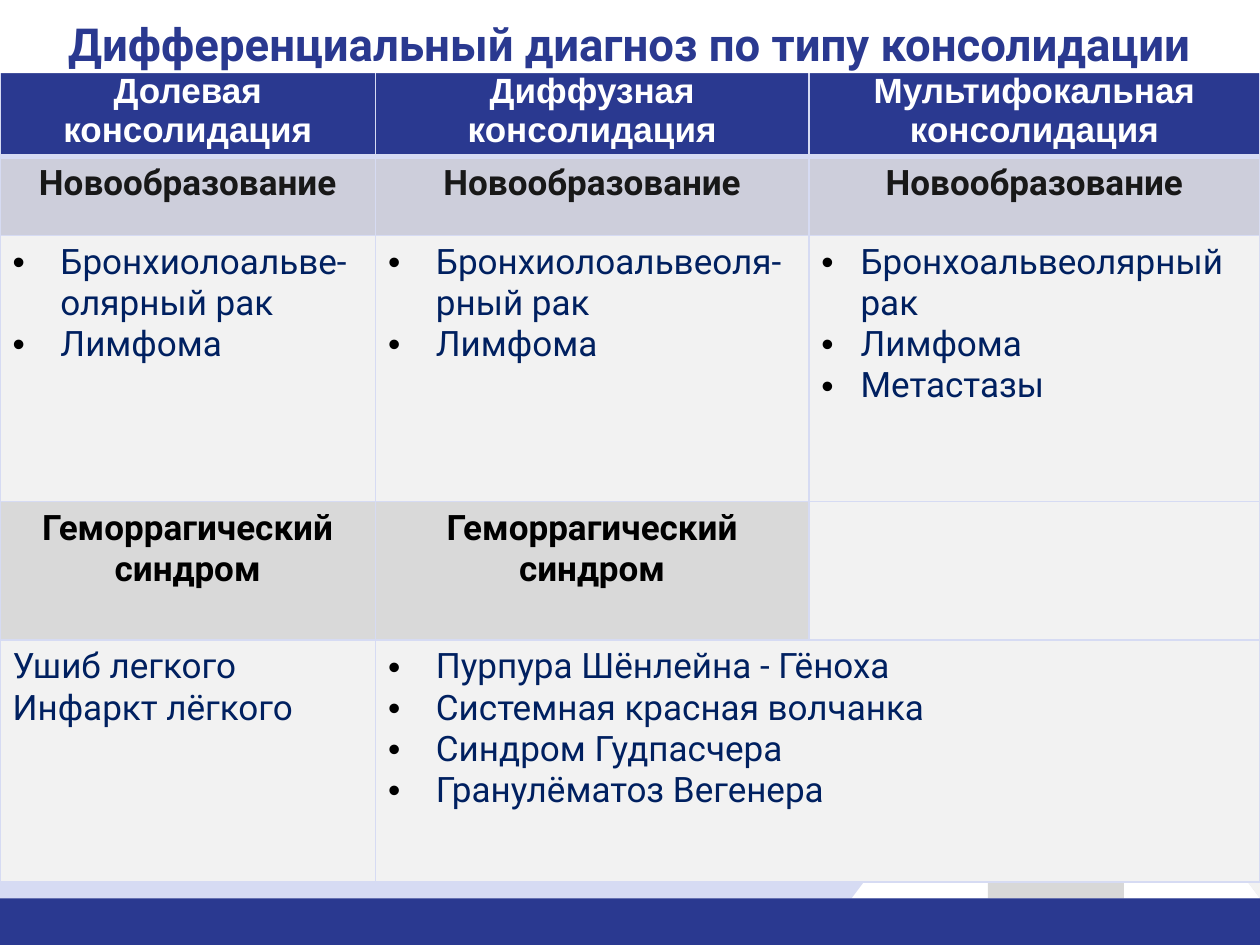
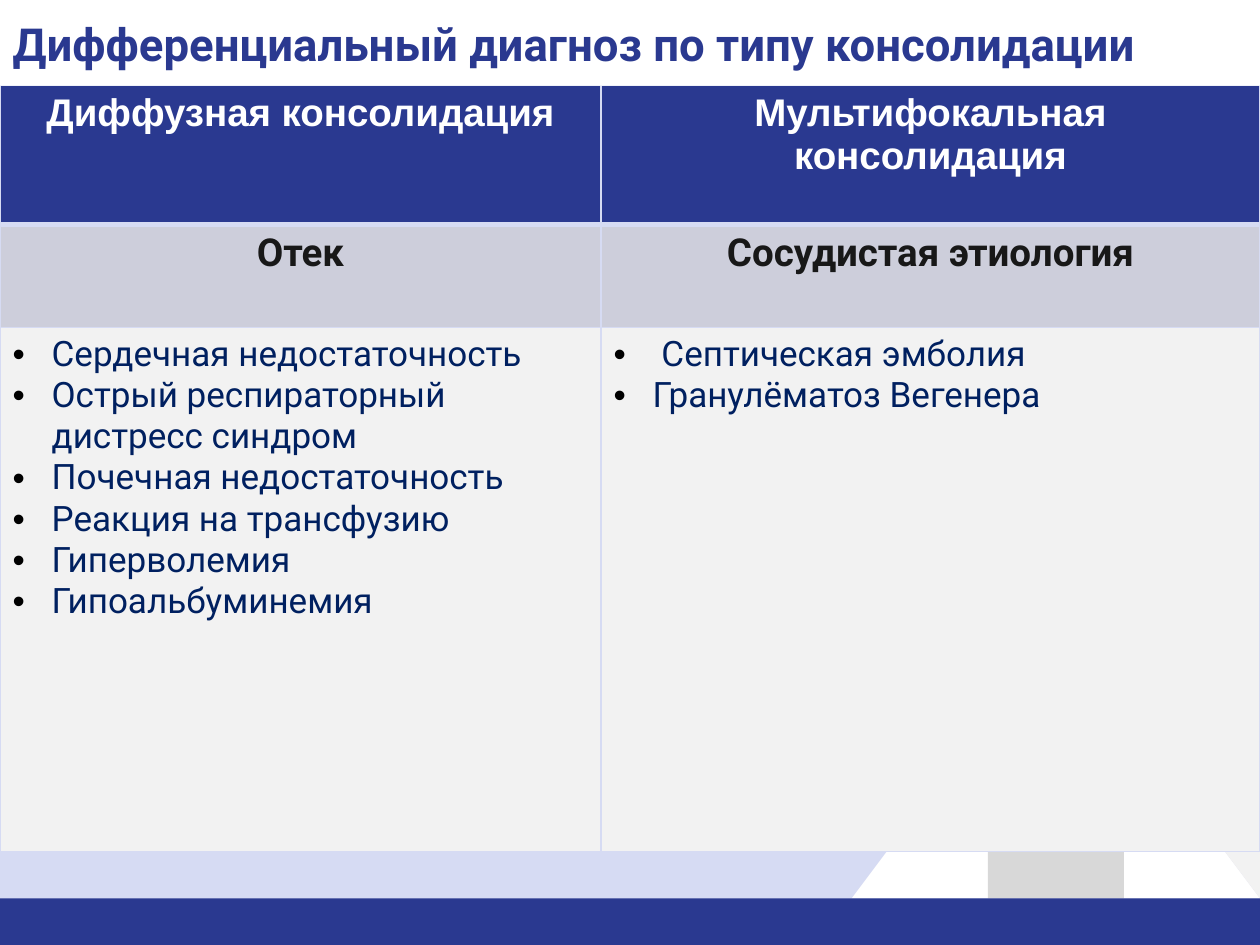
from dataclasses import dataclass

from lxml import etree
from pptx import Presentation
from pptx.dml.color import RGBColor
from pptx.enum.shapes import MSO_SHAPE
from pptx.enum.text import MSO_ANCHOR, MSO_AUTO_SIZE, PP_ALIGN
from pptx.oxml.ns import qn
from pptx.util import Pt

PX = 9144  # EMU in one px, 100 px to the inch
TITLE_ONLY = 5
RECTANGLE = MSO_SHAPE.RECTANGLE
RIGHT_TRIANGLE = MSO_SHAPE.RIGHT_TRIANGLE
LEFT, CENTER = PP_ALIGN.LEFT, PP_ALIGN.CENTER
PAGE_WIDTH, PAGE_HEIGHT = 1000, 750
BAND_TOP = 713
MOTIF_SIDE, MOTIF_HEIGHT = 108, 144


@dataclass(frozen=True)
class Theme:
    navy: str = "2A3990"
    lavender: str = "D6DBF3"
    white: str = "FFFFFF"
    silver: str = "D8D8D8"
    pale: str = "F2F2F2"
    body_ink: str = "002060"
    black: str = "000000"
    title_size: int = 26
    body_size: int = 20
    heading_font: str = "Arial"
    text_font: str = "Roboto"


THEME = Theme()

# kind of cell: fill, text colour, font, bold, alignment
CELL_STYLES = {
    "header": (THEME.navy, THEME.white, THEME.heading_font, True, CENTER),
    "section": ("CDCEDB", "181818", THEME.text_font, True, CENTER),
    "subsection": ("D9D9D9", THEME.black, THEME.text_font, True, CENTER),
    "body": (THEME.pale, THEME.body_ink, THEME.text_font, False, LEFT),
}


@dataclass(frozen=True)
class Cell:
    """Paragraphs of a cell, with one bullet indent in px for each (0: no bullet)."""
    kind: str
    lines: tuple = ()
    indents: tuple = ()
    span: int = 1


def header(text):
    return Cell("header", (text,), (0,))


def section(text):
    return Cell("section", (text,), (0,))


def subsection(text):
    return Cell("subsection", (text,), (0,))


def plain(*lines):
    return Cell("body", lines, (0,) * len(lines))


def bullets(*lines, indent=38, span=1):
    return Cell("body", lines, (indent,) * len(lines), span)


def color(value):
    return RGBColor.from_string(value)


def paint(target, value):
    target.fill.solid()
    target.fill.fore_color.rgb = color(value)


def set_attributes(target, values):
    for name, value in values.items():
        setattr(target, name, value)


def format_font(font, name, size, ink, bold):
    set_attributes(font, {"name": name, "size": Pt(size), "bold": bold})
    font.color.rgb = color(ink)


def add_block(page, kind, box, fill):
    block = page.shapes.add_shape(kind, *(length * PX for length in box))
    block.shadow.inherit = False
    paint(block, fill)
    block.line.fill.background()
    return block


def decorate_layout(deck, layout, page):
    """Draw the shared motif and footer band, then move them to the layout."""
    paint(deck.slide_master.background, THEME.lavender)
    right = PAGE_WIDTH - MOTIF_SIDE
    middle = right - MOTIF_SIDE
    left = middle - MOTIF_SIDE
    top = BAND_TOP - MOTIF_HEIGHT

    def motif(kind, x, fill):
        return add_block(page, kind, (x, top, MOTIF_SIDE, MOTIF_HEIGHT), fill)

    lower_right = motif(RIGHT_TRIANGLE, right, THEME.white)
    lower_left = motif(RIGHT_TRIANGLE, left, THEME.white)
    lower_left.element.spPr.find(qn("a:xfrm")).set("flipH", "1")
    center = motif(RECTANGLE, middle, THEME.silver)
    upper_right = motif(RIGHT_TRIANGLE, right, THEME.pale)
    upper_right.rotation = 180
    band = add_block(page, RECTANGLE,
                     (0, BAND_TOP, PAGE_WIDTH, PAGE_HEIGHT - BAND_TOP), THEME.navy)
    for block in (lower_right, lower_left, center, upper_right, band):
        layout.shapes.element.append(block.element)


def set_title(page, text, height, alignment):
    """Format the title placeholder and bring it in front of the table."""
    title = page.shapes.title
    set_attributes(title, {"left": 0, "top": 0, "width": PAGE_WIDTH * PX,
                           "height": height * PX})
    paint(title, THEME.white)
    frame = title.text_frame
    set_attributes(frame, {
        "text": text, "word_wrap": True, "auto_size": MSO_AUTO_SIZE.NONE,
        "vertical_anchor": MSO_ANCHOR.TOP, "margin_top": 13 * PX, "margin_bottom": 0,
        "margin_left": 10 * PX, "margin_right": 10 * PX,
    })
    para = frame.paragraphs[0]
    para.alignment = alignment
    format_font(para.runs[0].font, THEME.text_font, THEME.title_size, THEME.navy, True)
    title.element.getparent().append(title.element)


def add_bullet(para, indent):
    properties = para._p.get_or_add_pPr()
    properties.set("marL", str(indent * PX))
    properties.set("indent", str(-indent * PX))
    bullet_color = etree.SubElement(properties, qn("a:buClr"))
    etree.SubElement(bullet_color, qn("a:srgbClr"), val=THEME.black)
    etree.SubElement(properties, qn("a:buFont"), typeface="Arial")
    etree.SubElement(properties, qn("a:buChar"), char="•")


def add_borders(cell, widths):
    """Add cell borders from a dict of side letter to points, in schema order."""
    properties = cell._tc.get_or_add_tcPr()
    for side, width in widths.items():
        line = etree.SubElement(properties, qn(f"a:ln{side}"), w=str(Pt(width)))
        fill = etree.SubElement(line, qn("a:solidFill"))
        etree.SubElement(fill, qn("a:srgbClr"), val=THEME.lavender)


def fill_cell(cell, content, size):
    fill, ink, font_name, bold, alignment = CELL_STYLES[content.kind]
    paint(cell, fill)
    frame = cell.text_frame
    for index, (line, indent) in enumerate(zip(content.lines, content.indents)):
        para = frame.add_paragraph() if index else frame.paragraphs[0]
        para.alignment = alignment
        if indent:
            add_bullet(para, indent)
        span = para.add_run()
        span.text = line
        format_font(span.font, font_name, size, ink, bold)


def add_diagnosis_table(page, top, widths, heights, rows, heading_size):
    box = (0, top, sum(widths), sum(heights))
    table = page.shapes.add_table(len(heights), len(widths),
                                  *(length * PX for length in box)).table
    set_attributes(table, {"first_row": False, "horz_banding": False})
    for column, width in zip(table.columns, widths):
        column.width = width * PX
    for row, height in zip(table.rows, heights):
        row.height = height * PX
    for y, contents in enumerate(rows):
        for x in range(len(widths)):
            add_borders(table.cell(y, x), {"L": 1, "R": 1, "T": 3 if y == 1 else 1,
                                           "B": 3 if y == 0 else 1})
        for x, content in enumerate(contents):
            cell = table.cell(y, x)
            if content.span > 1:
                cell.merge(table.cell(y, x + content.span - 1))
            size = THEME.body_size if content.kind == "body" else heading_size
            fill_cell(cell, content, size)


def build_tumour_slide(page, title):
    rows = [
        [header("Долевая консолидация"), header("Диффузная консолидация"),
         header("Мультифокальная консолидация")],
        [section("Новообразование")] * 3,
        [bullets("Бронхиолоальве-олярный рак", "Лимфома"),
         bullets("Бронхиолоальвеоля-рный рак", "Лимфома"),
         bullets("Бронхоальвеолярный рак", "Лимфома", "Метастазы", indent=31)],
        [subsection("Геморрагический синдром")] * 2 + [plain()],
        [plain("Ушиб легкого", "Инфаркт лёгкого"),
         bullets("Пурпура Шёнлейна - Гёноха", "Системная красная волчанка",
                 "Синдром Гудпасчера", "Гранулёматоз Вегенера", span=2)],
    ]
    add_diagnosis_table(page, 52, (298, 344, 358), (47, 63, 211, 110, 192), rows, 20)
    set_title(page, title, 58, CENTER)


def build_oedema_slide(page, title):
    rows = [
        [header("Диффузная консолидация"), header("Мультифокальная консолидация")],
        [section("Отек"), section("Сосудистая этиология")],
        [bullets("Сердечная недостаточность", "Острый респираторный дистресс синдром",
                 "Почечная недостаточность", "Реакция на трансфузию",
                 "Гиперволемия", "Гипоальбуминемия", indent=31),
         Cell("body", ("Септическая эмболия", "Гранулёматоз Вегенера"), (38, 31))],
    ]
    add_diagnosis_table(page, 68, (477, 523), (110, 82, 416), rows, 22)
    set_title(page, title, 68, LEFT)


def main():
    deck = Presentation()
    set_attributes(deck, {"slide_width": PAGE_WIDTH * PX, "slide_height": PAGE_HEIGHT * PX})
    layout = deck.slide_layouts[TITLE_ONLY]
    title = "Дифференциальный диагноз по типу консолидации"
    tumour_page, oedema_page = (deck.slides.add_slide(layout) for _ in range(2))
    decorate_layout(deck, layout, tumour_page)
    build_tumour_slide(tumour_page, title)
    build_oedema_slide(oedema_page, title)
    deck.save("out.pptx")


if __name__ == "__main__":
    main()
